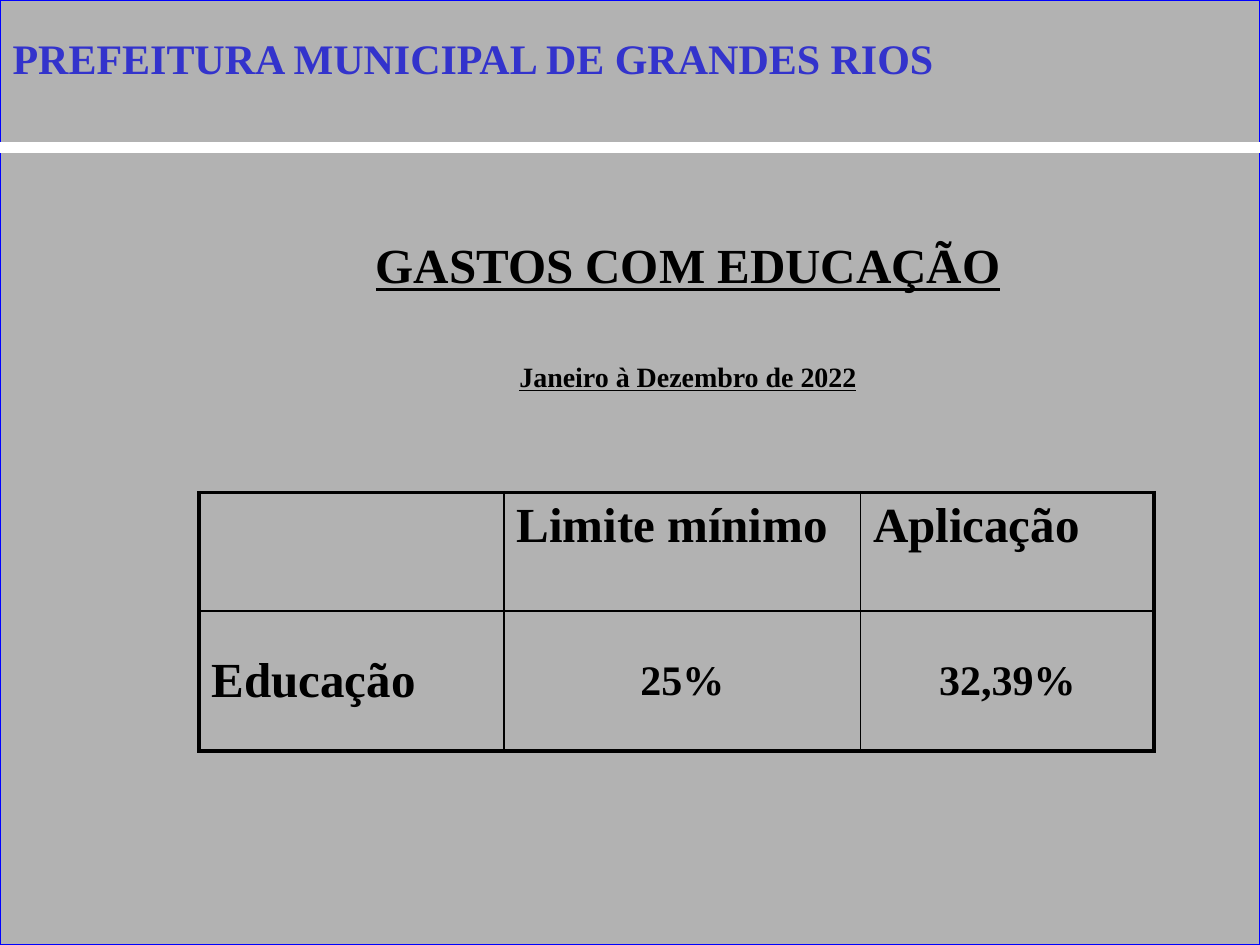
from dataclasses import dataclass

from lxml.etree import SubElement
from pptx import Presentation
from pptx.dml.color import RGBColor
from pptx.enum.shapes import MSO_CONNECTOR, MSO_SHAPE
from pptx.enum.text import MSO_ANCHOR, MSO_AUTO_SIZE, PP_ALIGN
from pptx.oxml import parse_xml
from pptx.oxml.ns import nsdecls, qn
from pptx.util import Inches, Pt


@dataclass(frozen=True)
class Theme:
    font: str = "Times New Roman"
    ink: str = "000000"
    accent: str = "3333CC"
    panel: str = "B2B2B2"
    frame: str = "0000FF"
    rule: str = "FFFFFF"
    shadow: str = "808080"
    large: int = 28
    medium: int = 24
    small: int = 16
    outer_border: float = 2.25
    inner_border: float = 1


class SlideBuilder:
    def __init__(self, page, theme):
        self.page = page
        self.theme = theme

    def place(self, shape, left, top, width, height):
        values = {"left": left, "top": top, "width": width, "height": height}
        for name, value in values.items():
            setattr(shape, name, Inches(value))

    def add_text(self, para, text, size, color=None, underline=None, align=PP_ALIGN.LEFT):
        para.alignment = align
        para.space_before = Pt(0)
        span = para.add_run()
        span.text = text
        values = {"name": self.theme.font, "size": Pt(size), "bold": True, "underline": underline}
        for name, value in values.items():
            setattr(span.font, name, value)
        span.font.color.rgb = RGBColor.from_string(color or self.theme.ink)
        return span

    def prepare_frame(self, box):
        values = {"word_wrap": True, "auto_size": MSO_AUTO_SIZE.NONE,
                  "vertical_anchor": MSO_ANCHOR.TOP}
        for name, value in values.items():
            setattr(box.text_frame, name, value)
        return box.text_frame

    def backdrop(self, width, height):
        box = self.page.shapes.add_shape(
            MSO_SHAPE.RECTANGLE, 0, 0, Inches(width), Inches(height))
        box.shadow.inherit = False
        box.fill.solid()
        box.fill.fore_color.rgb = RGBColor.from_string(self.theme.panel)
        box.line.color.rgb = RGBColor.from_string(self.theme.frame)
        box.line.width = Pt(0.75)
        # Send behind the placeholders
        self.page.shapes._spTree.insert(2, box._element)

    def rule(self, top, width):
        line = self.page.shapes.add_connector(
            MSO_CONNECTOR.STRAIGHT, 0, Inches(top), Inches(width), Inches(top))
        line.line.color.rgb = RGBColor.from_string(self.theme.rule)
        line.line.width = Pt(6)
        SubElement(line._element.spPr, qn("a:effectLst"))

    def title(self, text, *bounds):
        box = self.page.shapes.title
        self.place(box, *bounds)
        para = self.prepare_frame(box).paragraphs[0]
        span = self.add_text(para, text, self.theme.medium, self.theme.accent)
        shadow = parse_xml(
            f'<a:effectLst {nsdecls("a")}><a:outerShdw dist="35921" dir="2700000">'
            f'<a:srgbClr val="{self.theme.shadow}"/></a:outerShdw></a:effectLst>')
        span.font._element.find(qn("a:solidFill")).addnext(shadow)

    def body(self, lines, gap, *bounds):
        box = self.page.placeholders[1]
        self.place(box, *bounds)
        frame = self.prepare_frame(box)
        for index, (text, size) in enumerate(lines):
            para = frame.add_paragraph() if index else frame.paragraphs[0]
            self.add_text(para, text, size, underline=True, align=PP_ALIGN.CENTER)
            para.line_spacing = 1.5
            para.space_before = Pt(gap if index else 0)
            properties = para._p.get_or_add_pPr()
            properties.set("marL", "0")
            properties.set("indent", "0")
            SubElement(properties, qn("a:buNone"))

    def border(self, cell, side, width):
        properties = cell._tc.get_or_add_tcPr()
        line = parse_xml(
            f'<a:{side} {nsdecls("a")} w="{Pt(width)}"><a:solidFill>'
            f'<a:srgbClr val="{self.theme.ink}"/></a:solidFill></a:{side}>')
        properties.append(line)

    def table(self, rows, left, top, widths, heights):
        grid = self.page.shapes.add_table(
            len(heights), len(widths), Inches(left), Inches(top),
            Inches(sum(widths)), Inches(sum(heights))).table
        grid.first_row = grid.horz_banding = False
        for column, width in zip(grid.columns, widths):
            column.width = Inches(width)
        for row, height in zip(grid.rows, heights):
            row.height = Inches(height)
        last_row, last_column = len(heights) - 1, len(widths) - 1
        for r, texts in enumerate(rows):
            for c, text in enumerate(texts):
                cell = grid.cell(r, c)
                is_value = r > 0 and c > 0
                cell.vertical_anchor = MSO_ANCHOR.MIDDLE if r else MSO_ANCHOR.TOP
                if text:
                    self.add_text(cell.text_frame.paragraphs[0], text,
                                  self.theme.medium if is_value else self.theme.large,
                                  align=PP_ALIGN.CENTER if is_value else PP_ALIGN.LEFT)
                # Thick outside edges, thin inside ones
                edges = {"lnL": c == 0, "lnR": c == last_column,
                         "lnT": r == 0, "lnB": r == last_row}
                for side, outside in edges.items():
                    self.border(cell, side, self.theme.outer_border if outside
                                else self.theme.inner_border)
                cell.fill.background()


def main():
    deck = Presentation()
    deck.slide_width, deck.slide_height = Inches(10), Inches(7.5)
    theme = Theme()
    builder = SlideBuilder(deck.slides.add_slide(deck.slide_layouts[1]), theme)

    # Backdrop and header
    builder.backdrop(10, 7.5)
    builder.rule(1.17, 10)
    builder.title("PREFEITURA MUNICIPAL DE GRANDES RIOS", 0, 0.21, 9.49, 0.5)

    # Subject and period
    builder.body([("GASTOS COM EDUCAÇÃO", theme.large),
                  ("Janeiro à Dezembro de 2022", theme.small)],
                 28, 1.42, 1.58, 8.08, 6.26)

    # Spending against the legal minimum
    builder.table([["", "Limite mínimo", "Aplicação"],
                   ["Educação", "25%", "32,39%"]],
                  1.58, 3.91, [2.42, 2.83, 2.33], [0.94, 1.11])

    deck.save("out.pptx")


if __name__ == "__main__":
    main()
